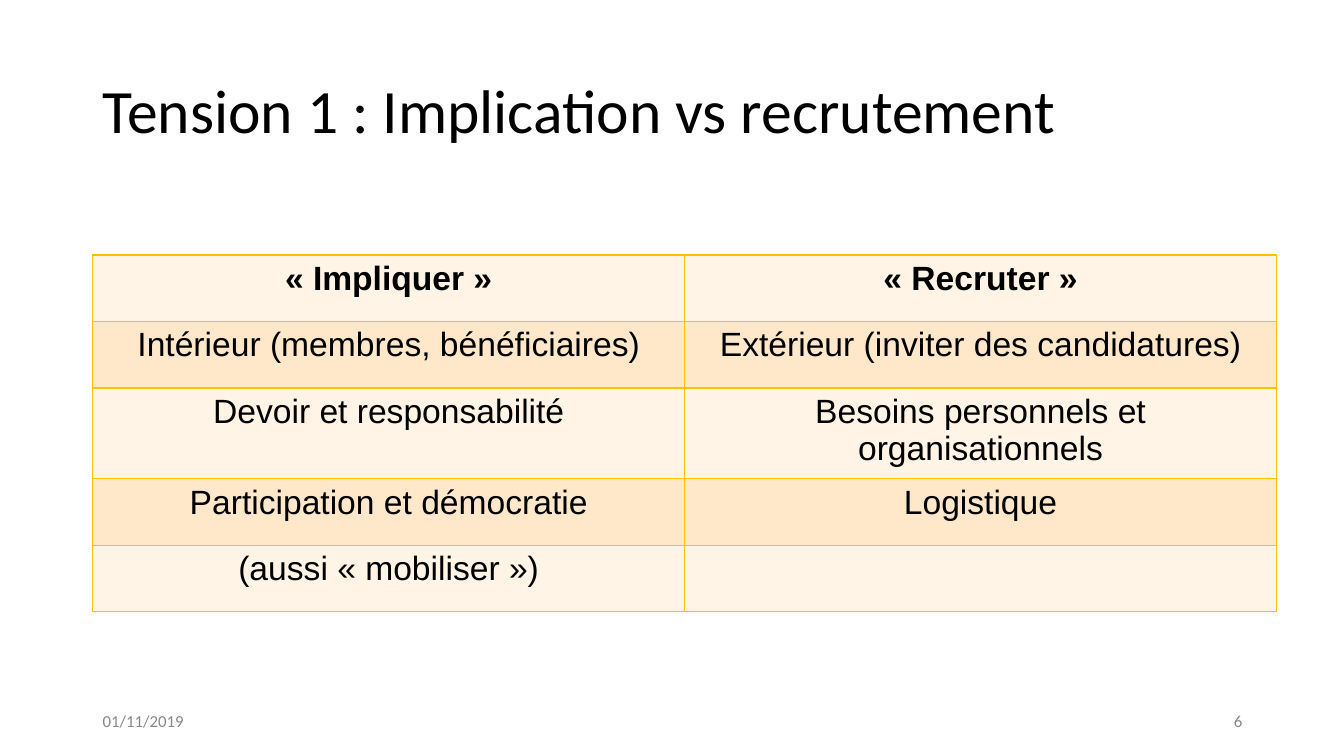
from lxml.etree import SubElement
from pptx import Presentation
from pptx.dml.color import RGBColor
from pptx.enum.text import MSO_ANCHOR as Anchor, PP_ALIGN as Align
from pptx.oxml.ns import qn
from pptx.util import Inches, Pt

TITLE = "Tension 1 : Implication vs recrutement"
DATE = "01/11/2019"
PAGE = "6"
COMPARISON = [
    ("« Impliquer »", "« Recruter »"),
    ("Intérieur (membres, bénéficiaires)", "Extérieur (inviter des candidatures)"),
    ("Devoir et responsabilité", "Besoins personnels et organisationnels"),
    ("Participation et démocratie", "Logistique"),
    ("(aussi « mobiliser »)", ""),
]

BLACK = RGBColor(0x00, 0x00, 0x00)
GREY = RGBColor(0x88, 0x88, 0x88)
GOLD = RGBColor(0xFF, 0xC0, 0x00)
BANDS = (RGBColor(0xFF, 0xF4, 0xE6), RGBColor(0xFF, 0xE8, 0xCA))

LEFT, CONTENT_WIDTH = 0.92, 11.5
FOOTER_TOP, FOOTER_WIDTH, FOOTER_HEIGHT = 6.95, 3, 0.4
TABLE_TOP, COLUMN_WIDTH, ROW_HEIGHT = 2.53, 5.87, 0.66


def write(frame, text, font="Calibri", size=12, color=BLACK, bold=False,
          align=Align.LEFT, spacing=None):
    paragraph = frame.paragraphs[0]
    paragraph.alignment = align
    if spacing:
        paragraph.line_spacing = spacing
    if text:
        target = paragraph.add_run()
        target.text = text
    else:
        target = paragraph
    target.font.name = font
    target.font.size = Pt(size)
    target.font.bold = bold
    target.font.color.rgb = color


def add_label(slide, text, left, top, width, height, **style):
    frame = slide.shapes.add_textbox(
        Inches(left), Inches(top), Inches(width), Inches(height)).text_frame
    frame.word_wrap = True
    frame.vertical_anchor = Anchor.MIDDLE
    write(frame, text, **style)


def add_borders(cell):
    properties = cell._tc.get_or_add_tcPr()
    for position, side in enumerate(("lnL", "lnR", "lnT", "lnB")):
        line = SubElement(properties, qn(f"a:{side}"), w=str(Pt(1)))
        fill = SubElement(line, qn("a:solidFill"))
        SubElement(fill, qn("a:srgbClr"), val=str(GOLD))
        properties.insert(position, line)


def add_comparison(slide):
    rows, columns = len(COMPARISON), len(COMPARISON[0])
    table = slide.shapes.add_table(
        rows, columns, Inches(LEFT), Inches(TABLE_TOP),
        Inches(columns * COLUMN_WIDTH), Inches(rows * ROW_HEIGHT)).table
    for column in table.columns:
        column.width = Inches(COLUMN_WIDTH)
    for r, entries in enumerate(COMPARISON):
        table.rows[r].height = Inches(ROW_HEIGHT)
        for c, entry in enumerate(entries):
            cell = table.cell(r, c)
            cell.fill.solid()
            cell.fill.fore_color.rgb = BANDS[r % 2]
            add_borders(cell)
            write(cell.text_frame, entry, font="Arial", size=24,
                  bold=r == 0, align=Align.CENTER)


def main():
    deck = Presentation()
    deck.slide_width, deck.slide_height = Inches(13.33), Inches(7.5)
    slide = deck.slides.add_slide(deck.slide_layouts[6])
    add_label(slide, DATE, LEFT, FOOTER_TOP, FOOTER_WIDTH, FOOTER_HEIGHT, color=GREY)
    add_label(slide, PAGE, LEFT + CONTENT_WIDTH - FOOTER_WIDTH, FOOTER_TOP,
              FOOTER_WIDTH, FOOTER_HEIGHT, color=GREY, align=Align.RIGHT)
    add_label(slide, TITLE, LEFT, 0.4, CONTENT_WIDTH, 1.45, size=44, spacing=0.9)
    add_comparison(slide)
    deck.save("out.pptx")


if __name__ == "__main__":
    main()
